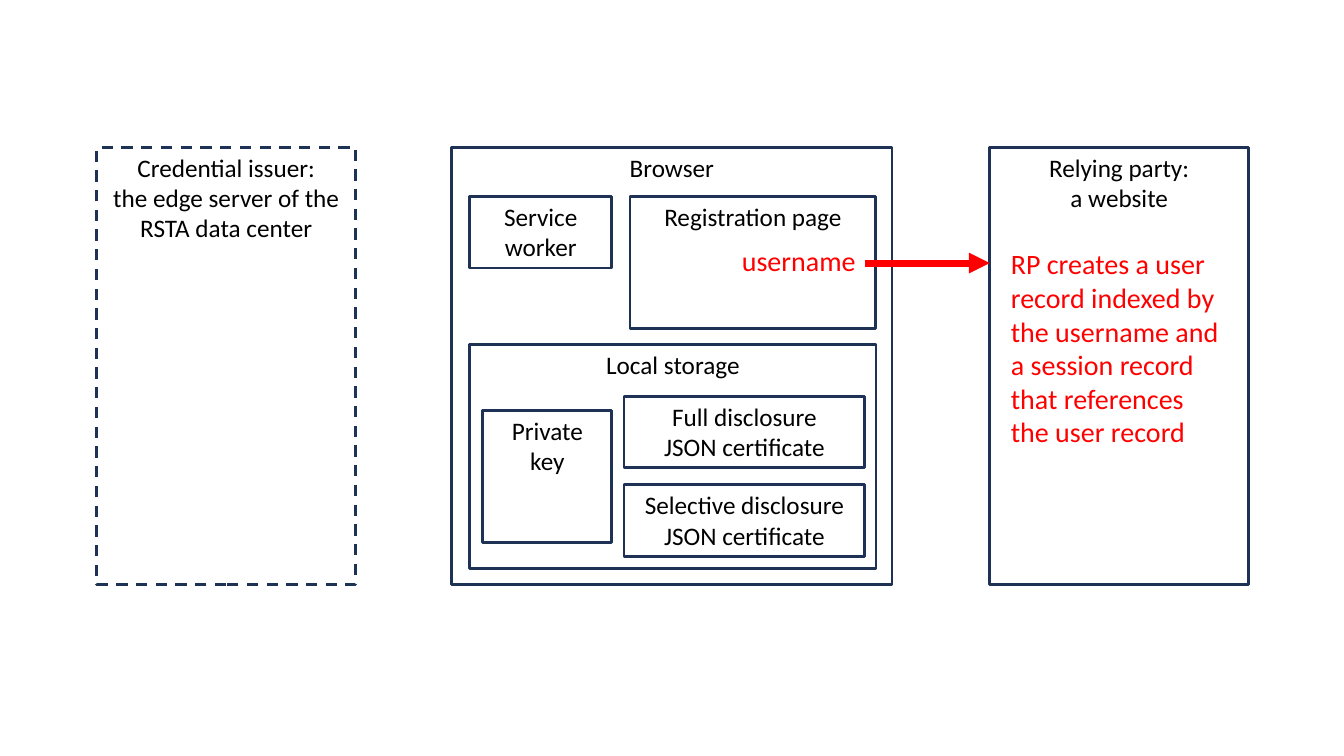
from dataclasses import dataclass
from typing import Optional

from pptx import Presentation
from pptx import util as u
from pptx.dml.color import RGBColor
from pptx.enum import dml, shapes, text
from pptx.oxml import ns
from lxml import etree

NAVY = RGBColor(0x1E, 0x32, 0x56)
BLACK = RGBColor(0x00, 0x00, 0x00)
RED = RGBColor(0xFF, 0x00, 0x00)
WHITE = RGBColor(0xFF, 0xFF, 0xFF)

# Shared measures, in points
PARTY_TOP, PARTY_HEIGHT, PARTY_WIDTH = 105.1, 312.5, 185
UPPER_ROW = 140.4
LOCAL_LEFT = 335.5
CERT_LEFT, CERT_WIDTH = 445.7, 172.1
TWO_LINES = 51.1
TALL_BOX = 94.4
RELYING_LEFT = 707
ARROW_Y = 187.9


@dataclass(frozen=True)
class Box:
    left: float
    top: float
    width: float
    height: float
    lines: tuple[str, ...]
    dashed: bool = False


@dataclass(frozen=True)
class Message:
    left: float
    top: float
    width: float
    height: float
    wording: str
    align: text.PP_ALIGN


COMPONENTS = (
    # Browser and its contents
    Box(322.6, PARTY_TOP, 314.6, PARTY_HEIGHT, ("Browser",)),
    Box(LOCAL_LEFT, UPPER_ROW, 101.5, TWO_LINES, ("Service", "worker")),
    Box(LOCAL_LEFT, 246.2, 290.2, 159.8, ("Local storage",)),
    Box(CERT_LEFT, 283, CERT_WIDTH, TWO_LINES, ("Full disclosure", "JSON certificate")),
    Box(CERT_LEFT, 346.3, CERT_WIDTH, TWO_LINES, ("Selective disclosure", "JSON certificate")),
    Box(344.9, 293, 92.2, TALL_BOX, ("Private key",)),
    Box(450, UPPER_ROW, 175.7, TALL_BOX, ("Registration page",)),
    # The two outer parties
    Box(RELYING_LEFT, PARTY_TOP, PARTY_WIDTH, PARTY_HEIGHT, ("Relying party:", "a website")),
    Box(69.1, PARTY_TOP, PARTY_WIDTH, PARTY_HEIGHT,
        ("Credential issuer:", "the edge server of the RSTA data center"), dashed=True),
)

MESSAGES = (
    Message(519.1, 170.6, 103, 31.7, "username", text.PP_ALIGN.CENTER),
    Message(715, 172.8, 168.5, 152.6,
            "RP creates a user record indexed by the username and "
            "a session record that references the user record", text.PP_ALIGN.LEFT),
)


def write(frame, lines: tuple[str, ...], *, size: float = 18, color: RGBColor = BLACK,
          align: text.PP_ALIGN = text.PP_ALIGN.CENTER) -> None:
    frame.word_wrap = True
    frame.vertical_anchor = text.MSO_ANCHOR.TOP
    for index, line in enumerate(lines):
        paragraph = frame.paragraphs[0] if index == 0 else frame.add_paragraph()
        paragraph.text = line
        paragraph.alignment = align
        paragraph.font.name = "Calibri"
        paragraph.font.size = u.Pt(size)
        paragraph.font.color.rgb = color


def add_rectangle(slide, part: Box | Message, fill: Optional[RGBColor] = None):
    rectangle = slide.shapes.add_shape(
        shapes.MSO_SHAPE.RECTANGLE,
        u.Pt(part.left), u.Pt(part.top), u.Pt(part.width), u.Pt(part.height))
    rectangle.shadow.inherit = False
    if fill is None:
        rectangle.fill.background()
    else:
        rectangle.fill.solid()
        rectangle.fill.fore_color.rgb = fill
    return rectangle


def draw_box(slide, box: Box) -> None:
    outline = add_rectangle(slide, box)
    outline.line.color.rgb = NAVY
    outline.line.width = u.Pt(2)
    if box.dashed:
        outline.line.dash_style = dml.MSO_LINE.DASH
    write(outline.text_frame, box.lines)


def draw_message(slide, message: Message) -> None:
    label = add_rectangle(slide, message, fill=WHITE)
    label.line.fill.background()
    write(label.text_frame, (message.wording,), size=20, color=RED, align=message.align)


def draw_arrow(slide, start: float, end: float, y: float) -> None:
    arrow = slide.shapes.add_connector(
        shapes.MSO_CONNECTOR.STRAIGHT, u.Pt(start), u.Pt(y), u.Pt(end), u.Pt(y))
    arrow.line.color.rgb = RED
    arrow.line.width = u.Pt(5)
    etree.SubElement(arrow.line._get_or_add_ln(), ns.qn("a:tailEnd"), type="triangle")
    etree.SubElement(arrow._element.spPr, ns.qn("a:effectLst"))


def main() -> None:
    deck = Presentation()
    deck.slide_width, deck.slide_height = u.Pt(960), u.Pt(540)
    slide = deck.slides.add_slide(deck.slide_layouts[6])
    for component in COMPONENTS:
        draw_box(slide, component)
    for message in MESSAGES:
        draw_message(slide, message)
    # Username sent to the relying party
    draw_arrow(slide, CERT_LEFT + CERT_WIDTH, RELYING_LEFT, ARROW_Y)
    deck.save("out.pptx")


if __name__ == "__main__":
    main()
